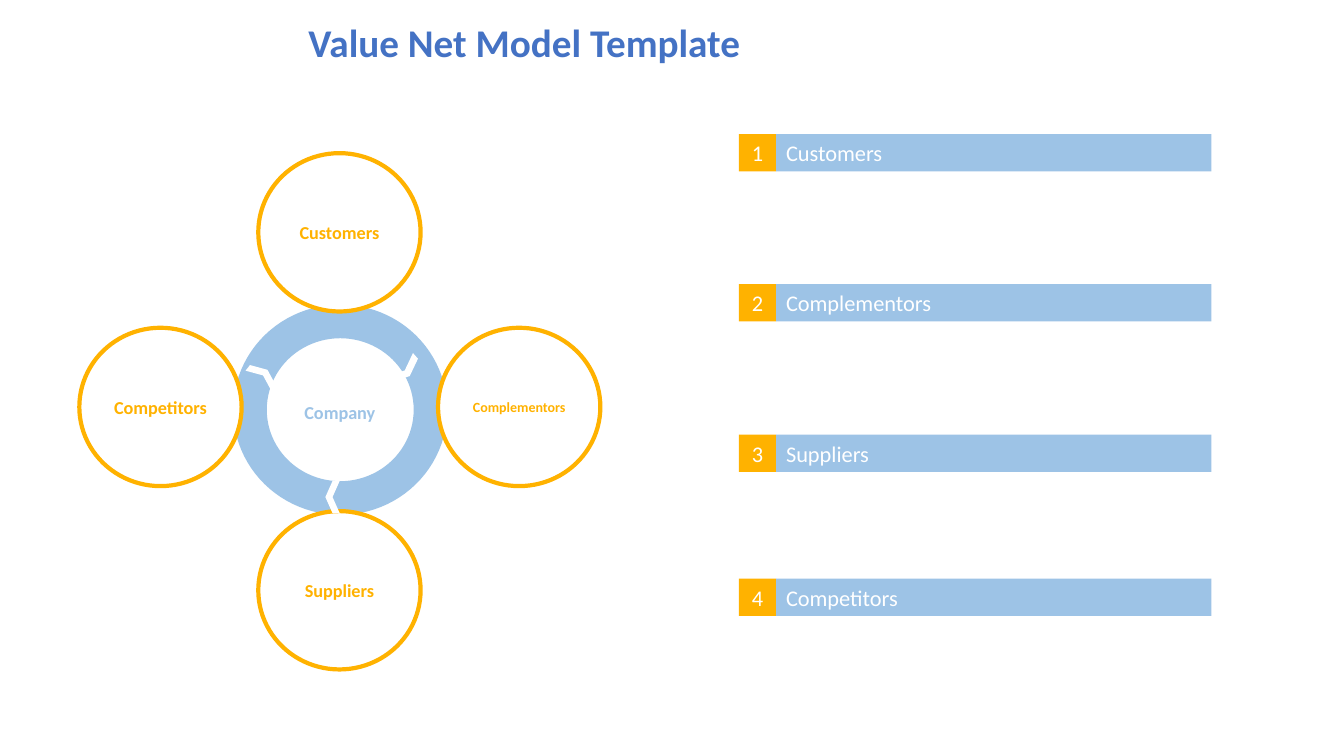
from lxml import etree
from pptx import Presentation
from pptx.dml.color import RGBColor
from pptx.enum.shapes import MSO_SHAPE as Shape
from pptx.enum.text import MSO_ANCHOR as Anchor, PP_ALIGN as Align
from pptx.util import Cm, Pt

FONT = "Calibri"
WHITE = "FFFFFF"
AMBER = "FFB200"
SKY = "9DC3E6"
BLUE = "4472C4"
TITLE_ONLY = 5

BAR_HEIGHT = 0.94
BAR_ROWS = [
    ("Customers", 3.38),
    ("Complementors", 7.16),
    ("Suppliers", 10.95),
    ("Competitors", 14.58),
]
CIRCLES = [
    ("Customers", 6.51, 3.86, 13),
    ("Complementors", 11.04, 8.26, 10),
    ("Competitors", 2, 8.26, 13),
    ("Suppliers", 6.51, 12.88, 13),
]
CHEVRONS = [
    (10.01, 8.89, 0.38, 0.89, 48.4),
    (8.2, 12.12, 0.36, 0.81, 180),
    (6.45, 9.04, 0.36, 0.84, 308.4),
]


def color(value):
    return RGBColor.from_string(value)


def write(box, text, size, tint, align=Align.LEFT, bold=False, anchor=Anchor.MIDDLE):
    frame = box.text_frame
    frame.text = text
    frame.word_wrap = True
    frame.vertical_anchor = anchor
    para = frame.paragraphs[0]
    para.alignment = align
    for span in para.runs:
        span.font.name = FONT
        span.font.size = Pt(size)
        span.font.bold = bold
        span.font.color.rgb = color(tint)


def add_shape(shapes, kind, left, top, width, height, fill=None, line=None, weight=0):
    shape = shapes.add_shape(kind, Cm(left), Cm(top), Cm(width), Cm(height))
    shape.shadow.inherit = False
    if fill:
        shape.fill.solid()
        shape.fill.fore_color.rgb = color(fill)
    else:
        shape.fill.background()
    if line:
        shape.line.color.rgb = color(line)
        shape.line.width = Pt(weight)
    else:
        shape.line.fill.background()
    return shape


def add_title(page, text):
    title = page.shapes.title
    title.left, title.top = Cm(7.52), Cm(0.38)
    title.width, title.height = Cm(26.09), Cm(1.52)
    write(title, text, 28, BLUE, bold=True)
    title.text_frame.paragraphs[0].line_spacing = 0.9


def add_bar(shapes, number, label, top):
    badge = add_shape(shapes, Shape.RECTANGLE, 18.62, top, BAR_HEIGHT, BAR_HEIGHT, AMBER)
    write(badge, str(number), 16, WHITE, Align.CENTER)
    bar = add_shape(shapes, Shape.RECTANGLE, 18.62 + BAR_HEIGHT, top, 10.97, BAR_HEIGHT, SKY)
    write(bar, label, 16, WHITE)


def add_circle(shapes, label, left, top, size):
    circle = add_shape(shapes, Shape.OVAL, left, top, 4.09, 3.99, WHITE, AMBER, 3)
    write(circle, label, size, AMBER, Align.CENTER, bold=True)


def add_chevron(shapes, left, top, width, height, angle):
    chevron = add_shape(shapes, Shape.CHEVRON, left, top, width, height, WHITE)
    chevron.rotation = angle


def add_value_net(page):
    net = page.shapes.add_group_shape().shapes
    add_shape(net, Shape.OVAL, 6.3, 8.1, 4.55, 4.45, line=SKY, weight=24)
    for circle in CIRCLES:
        add_circle(net, *circle)
    for chevron in CHEVRONS:
        add_chevron(net, *chevron)
    company = net.add_textbox(Cm(6.38), Cm(9.98), Cm(4.37), Cm(1.07))
    write(company, "Company", 13, SKY, Align.CENTER, bold=True, anchor=Anchor.TOP)


def main():
    deck = Presentation()
    deck.slide_width, deck.slide_height = Cm(33.87), Cm(19.05)
    page = deck.slides.add_slide(deck.slide_layouts[TITLE_ONLY])
    add_title(page, "Value Net Model Template")
    for number, (label, top) in enumerate(BAR_ROWS, 1):
        add_bar(page.shapes, number, label, top)
    add_value_net(page)
    deck.save("out.pptx")


if __name__ == "__main__":
    main()
